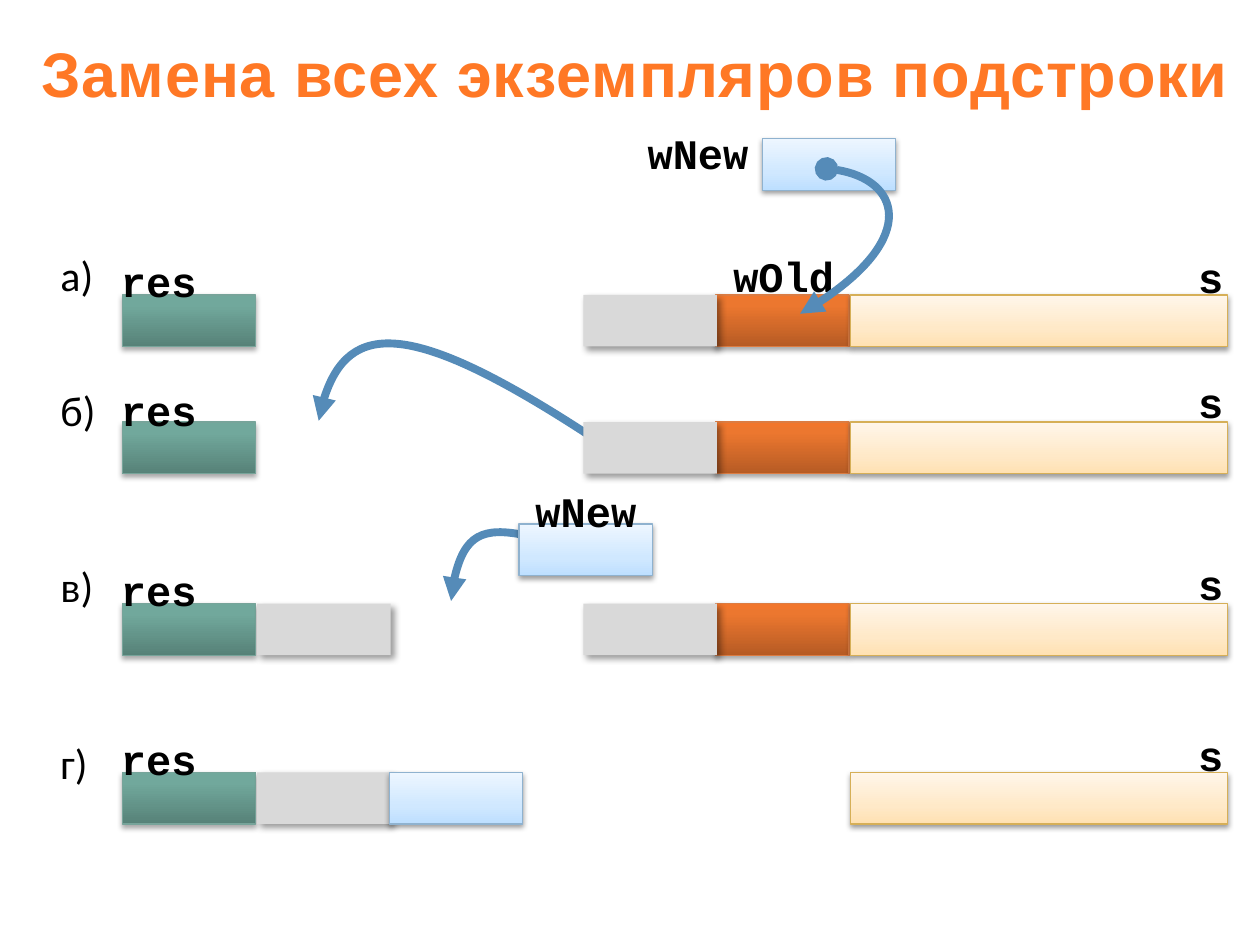
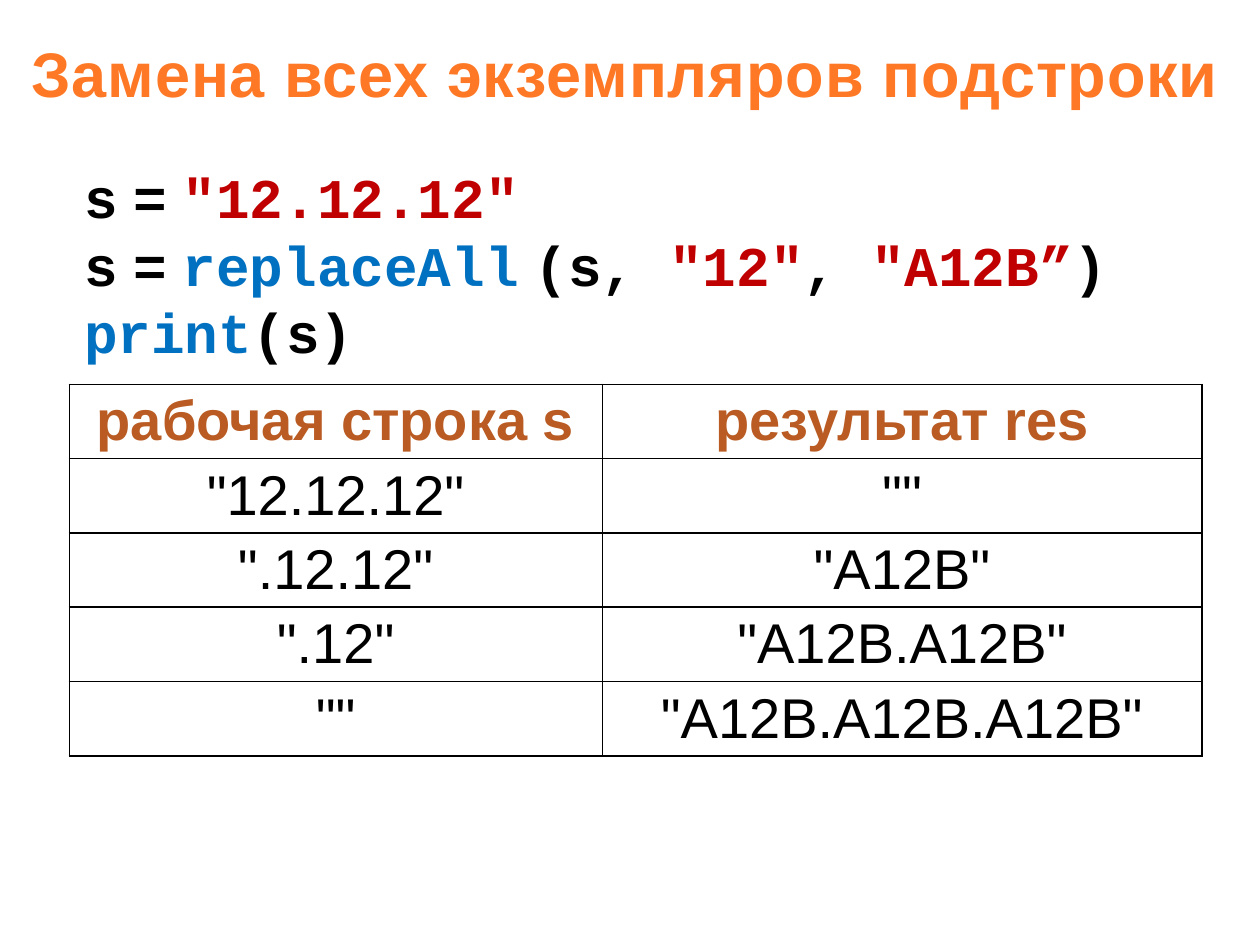
"""Build two slides that explain replacing every occurrence of a substring."""
from dataclasses import dataclass

from lxml import etree
from pptx import Presentation
from pptx.dml.color import RGBColor
from pptx.enum.shapes import MSO_SHAPE
from pptx.enum.text import MSO_ANCHOR, MSO_AUTO_SIZE, PP_ALIGN
from pptx.oxml.ns import qn
from pptx.util import Inches, Pt

RECTANGLE = MSO_SHAPE.RECTANGLE
MIDDLE, TOP = MSO_ANCHOR.MIDDLE, MSO_ANCHOR.TOP
LEFT, CENTER, RIGHT, JUSTIFY = PP_ALIGN.LEFT, PP_ALIGN.CENTER, PP_ALIGN.RIGHT, PP_ALIGN.JUSTIFY
TITLE_ONLY = 5


@dataclass(frozen=True)
class Theme:
    title_color: str = "FF7825"
    header_color: str = "B95B22"
    text_color: str = "000000"
    literal_color: str = "C00000"
    function_color: str = "0070C0"
    arrow_color: str = "558BB8"
    sans: str = "Arial"
    label_font: str = "Calibri"
    mono: str = "Courier New"
    title_size: int = 36
    body_size: int = 32
    label_size: int = 24


THEME = Theme()
TITLE = "Замена всех экземпляров подстроки"

SOFT_SHADOW = (38, 3.1, 1.6, 90)
DEEP_SHADOW = (35, 3.1, 1.8, 90)
DIAGONAL_SHADOW = (40, 4, 3, 45)
BLOCK_STYLES = {
    "result": ([(0, "578278"), (80, "71A89C"), (100, "70AA9D")], "77A49A", DEEP_SHADOW),
    "old": ([(0, "B65B24"), (80, "EC772F"), (100, "F1762C")], "DC7C42", DEEP_SHADOW),
    "plain": ("D9D9D9", None, DIAGONAL_SHADOW),
    "rest": ([(0, "FFE1B2"), (35, "FFE9C8"), (100, "FFF6EA")], "D6AF57", SOFT_SHADOW),
    "new": ([(0, "BDDFFF"), (35, "D0E8FF"), (100, "EDF6FF")], "8FB2CF", SOFT_SHADOW),
}
BLOCK_WIDTH, REST_WIDTH, BLOCK_HEIGHT = 1.06, 2.99, 0.41
LABEL_HEIGHT, LABEL_DROP = 0.38, 0.05
RESULT_X, COPIED_X, INSERTED_X = 0.97, 2.04, 3.09
BEFORE_X, OLD_X, REST_X = 4.63, 5.68, 6.75

SOURCE_BLOCKS = [("old", OLD_X), ("plain", BEFORE_X), ("rest", REST_X)]
RESULT = ("result", RESULT_X)
COPIED = ("plain", COPIED_X)
STEPS = [
    {"letter": "а)", "top": 2.34, "letter_y": 1.98, "res_y": 1.98, "s_y": 1.95,
     "blocks": [RESULT, *SOURCE_BLOCKS]},
    {"letter": "б)", "top": 3.35, "letter_y": 3.05, "res_y": 3.0, "s_y": 2.94,
     "blocks": [RESULT, *SOURCE_BLOCKS]},
    {"letter": "в)", "top": 4.79, "letter_y": 4.45, "res_y": 4.43, "s_y": 4.38,
     "blocks": [RESULT, *SOURCE_BLOCKS, COPIED]},
    {"letter": "г)", "top": 6.13, "letter_y": 5.85, "res_y": 5.77, "s_y": 5.74,
     "blocks": [RESULT, ("rest", REST_X), COPIED, ("new", INSERTED_X)]},
]
NEW_BLOCKS = [(6.05, 1.1), (4.12, 4.16)]
WORD_LABELS = [("wNew", 5.01, 0.96), ("wOld", 5.69, 1.94), ("wNew", 4.12, 3.8)]
ARROWS_BEHIND = [
    [(4.26, 4.27), (3.86, 4.16), (3.62, 4.27), (3.58, 4.77)],
    [(4.79, 3.53), (3.29, 2.53), (2.67, 2.53), (2.53, 3.34)],
]
ARROW_IN_FRONT = [(6.56, 1.34), (7.12, 1.37), (7.32, 1.94), (6.35, 2.49)]

CODE_COLORS = {"text": THEME.text_color, "literal": THEME.literal_color,
               "function": THEME.function_color, "gap": THEME.text_color}
GAP = (" ", "gap")
ASSIGNMENT = [("s", "text"), GAP, ("=", "text"), GAP]
CODE_LINES = [
    [*ASSIGNMENT, ('"12.12.12"', "literal")],
    [*ASSIGNMENT, ("replaceAll", "function"), GAP, ("(s, ", "text"), ('"12"', "literal"),
     (", ", "text"), ('"A12B”', "literal"), (")", "text")],
    [("print", "function"), ("(s)", "text")],
]
TABLE_ROWS = [
    ("рабочая строка s", "результат res"),
    ('"12.12.12"', '""'),
    ('".12.12"', '"A12B"'),
    ('".12"', '"A12B.A12B"'),
    ('""', '"A12B.A12B.A12B"'),
]
COLUMN_WIDTHS, ROW_HEIGHT = (4.23, 4.76), 0.59


def add_run(paragraph, text, size, font, color, bold=False):
    run = paragraph.add_run()
    run.text = text
    run.font.size = Pt(size)
    run.font.name = font
    run.font.bold = bold
    run.font.color.rgb = RGBColor.from_string(color)
    return run


def set_frame(frame, anchor, margins):
    frame.word_wrap = True
    frame.auto_size = MSO_AUTO_SIZE.NONE
    frame.vertical_anchor = anchor
    frame.margin_left, frame.margin_top, frame.margin_right, frame.margin_bottom = map(Inches, margins)


def add_title_slide(presentation, left):
    slide = presentation.slides.add_slide(presentation.slide_layouts[TITLE_ONLY])
    for placeholder in list(slide.placeholders):
        if placeholder != slide.shapes.title:
            placeholder.element.getparent().remove(placeholder.element)
    title = slide.shapes.title
    title.left, title.top, title.width, title.height = map(Inches, (left, 0.23, 9.77, 0.61))
    set_frame(title.text_frame, MIDDLE, (0.1, 0.08, 0.1, 0))
    paragraph = title.text_frame.paragraphs[0]
    paragraph.alignment = CENTER
    run = add_run(paragraph, TITLE, THEME.title_size, THEME.sans, THEME.title_color, True)
    run.font._element.set("spc", "50")
    return slide


def add_color(parent, tag, color, **attributes):
    element = etree.SubElement(parent, qn(tag), **attributes)
    return etree.SubElement(element, qn("a:srgbClr"), val=color)


def add_block(slide, kind, left, top):
    fill, line, (alpha, blur, distance, angle) = BLOCK_STYLES[kind]
    width = REST_WIDTH if kind == "rest" else BLOCK_WIDTH
    shape = slide.shapes.add_shape(RECTANGLE, *map(Inches, (left, top, width, BLOCK_HEIGHT)))
    properties = shape.element.spPr
    if isinstance(fill, str):
        shape.fill.solid()
        shape.fill.fore_color.rgb = RGBColor.from_string(fill)
    else:
        shape.fill.gradient()
        shape.fill.gradient_angle = 90
        stops = properties.find(".//" + qn("a:gsLst"))
        for stop in list(stops):
            stops.remove(stop)
        for position, color in fill:
            add_color(stops, "a:gs", color, pos=str(position * 1000))
    if line:
        shape.line.color.rgb = RGBColor.from_string(line)
        shape.line.width = Pt(0.75)
    else:
        shape.line.fill.background()
    shape.shadow.inherit = False
    shadow_color = add_color(
        properties.find(qn("a:effectLst")), "a:outerShdw", "000000", blurRad=str(Pt(blur)),
        dist=str(Pt(distance)), dir=str(angle * 60000), rotWithShape="0")
    etree.SubElement(shadow_color, qn("a:alpha"), val=str(alpha * 1000))


def add_curved_arrow(slide, points):
    start, *others = [(Inches(x), Inches(y)) for x, y in points]
    builder = slide.shapes.build_freeform(*start)
    builder.add_line_segments(others, close=False)
    shape = builder.convert_to_shape()
    shape.fill.background()
    shape.shadow.inherit = False
    shape.line.color.rgb = RGBColor.from_string(THEME.arrow_color)
    shape.line.width = Pt(4.5)
    segments = shape.element.spPr.findall(".//" + qn("a:lnTo"))
    curve = etree.SubElement(segments[0].getparent(), qn("a:cubicBezTo"))
    for segment in segments:
        curve.append(segment[0])
        segment.getparent().remove(segment)
    outline = shape.element.spPr.find(qn("a:ln"))
    etree.SubElement(outline, qn("a:headEnd"), type="oval")
    etree.SubElement(outline, qn("a:tailEnd"), type="triangle")


def add_label(slide, text, left, top, width, alignment=LEFT, font=THEME.mono):
    box = slide.shapes.add_textbox(*map(Inches, (left, top, width, LABEL_HEIGHT)))
    is_mono = font == THEME.mono
    set_frame(box.text_frame, TOP, (0, LABEL_DROP if is_mono else 0, 0, 0))
    paragraph = box.text_frame.paragraphs[0]
    paragraph.alignment = alignment
    add_run(paragraph, text, THEME.label_size, font, THEME.text_color, is_mono)


def build_diagram_slide(presentation):
    slide = add_title_slide(presentation, 0.16)
    for points in ARROWS_BEHIND:
        add_curved_arrow(slide, points)
    for step in STEPS:
        for kind, left in step["blocks"]:
            add_block(slide, kind, left, step["top"])
        add_label(slide, step["letter"], 0.48, step["letter_y"], 0.44, font=THEME.label_font)
        add_label(slide, "res", 0.96, step["res_y"], 0.65)
        add_label(slide, "s", 9.37, step["s_y"], 0.34, RIGHT)
    for left, top in NEW_BLOCKS:
        add_block(slide, "new", left, top)
    for text, left, top in WORD_LABELS:
        add_label(slide, text, left, top, BLOCK_WIDTH, CENTER)
    add_curved_arrow(slide, ARROW_IN_FRONT)


def add_code(slide):
    box = slide.shapes.add_textbox(*map(Inches, (0.47, 1.17, 9.14, 1.61)))
    frame = box.text_frame
    set_frame(frame, TOP, (0.1, 0.12, 0.1, 0.05))
    for index, pieces in enumerate(CODE_LINES):
        paragraph = frame.add_paragraph() if index else frame.paragraphs[0]
        paragraph.alignment = JUSTIFY
        paragraph.line_spacing = Pt(38.5)
        properties = paragraph._p.get_or_add_pPr()
        properties.set("marL", str(Inches(0.2)))
        properties.set("indent", str(Inches(-0.1)))
        for text, role in pieces:
            font = THEME.sans if role == "gap" else THEME.mono
            add_run(paragraph, text, THEME.body_size, font, CODE_COLORS[role], True)


def format_cell(cell, text, is_header):
    cell.vertical_anchor = MIDDLE
    cell.margin_left = cell.margin_right = Inches(0.17)
    cell.margin_top = cell.margin_bottom = 0
    properties = cell._tc.get_or_add_tcPr()
    for side in ("a:lnL", "a:lnR", "a:lnT", "a:lnB"):
        border = etree.SubElement(properties, qn(side), w=str(Pt(1)))
        add_color(border, "a:solidFill", THEME.text_color)
    cell.fill.background()
    paragraph = cell.text_frame.paragraphs[0]
    paragraph.alignment = CENTER
    color = THEME.header_color if is_header else THEME.text_color
    add_run(paragraph, text, THEME.body_size, THEME.sans, color, is_header)


def add_trace_table(slide):
    size = (sum(COLUMN_WIDTHS), ROW_HEIGHT * len(TABLE_ROWS))
    table = slide.shapes.add_table(
        len(TABLE_ROWS), len(COLUMN_WIDTHS), *map(Inches, (0.55, 3.05, *size))).table
    table.first_row = table.horz_banding = False
    for column, width in zip(table.columns, COLUMN_WIDTHS):
        column.width = Inches(width)
    for row_index, row in enumerate(TABLE_ROWS):
        table.rows[row_index].height = Inches(ROW_HEIGHT)
        for column_index, text in enumerate(row):
            format_cell(table.cell(row_index, column_index), text, row_index == 0)


def build_code_slide(presentation):
    slide = add_title_slide(presentation, 0.08)
    add_code(slide)
    add_trace_table(slide)


def main():
    presentation = Presentation()
    presentation.slide_width, presentation.slide_height = Inches(10), Inches(7.5)
    build_diagram_slide(presentation)
    build_code_slide(presentation)
    presentation.save("out.pptx")


if __name__ == "__main__":
    main()
